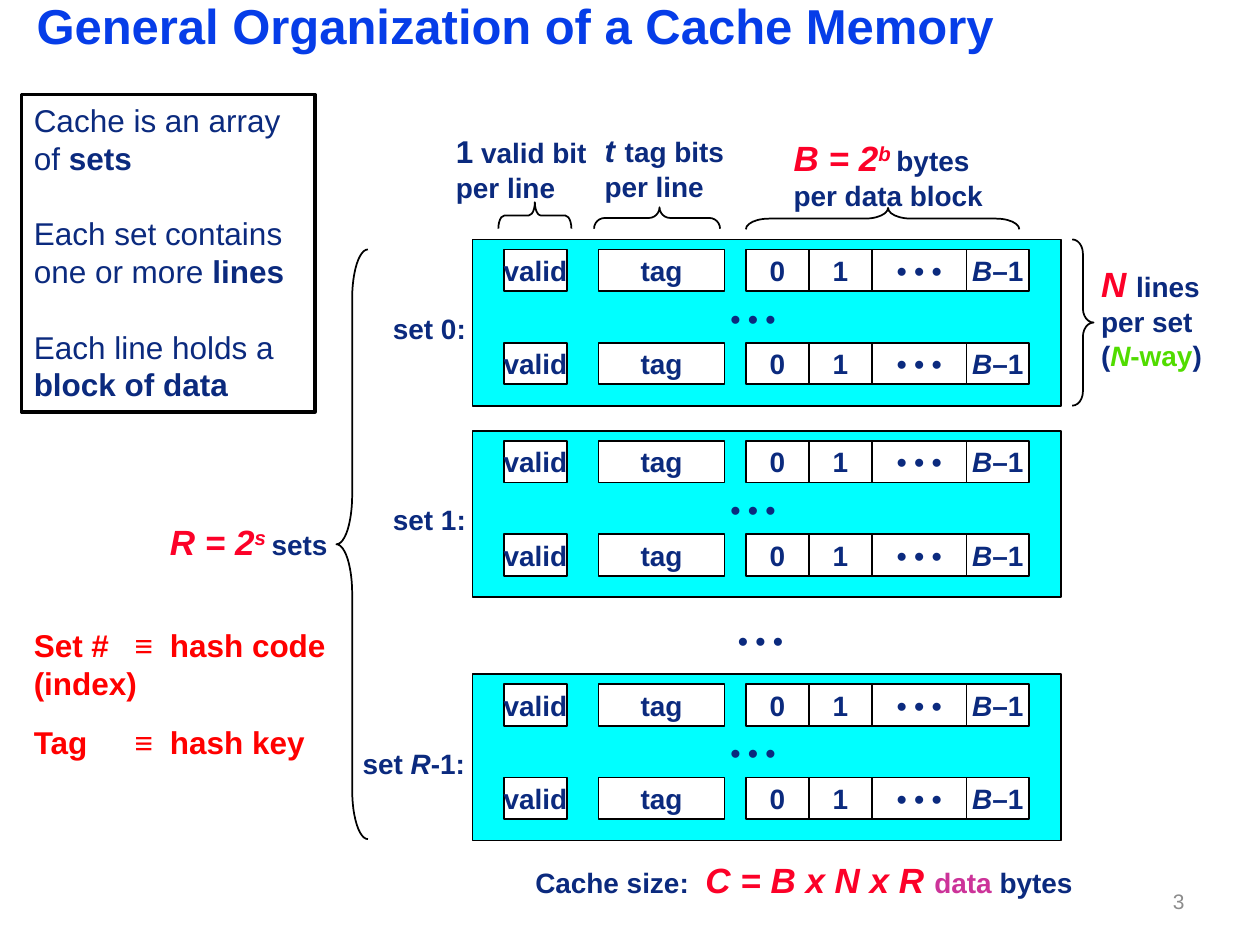
"""Build a slide that explains the general organization of a cache memory."""
from lxml import etree
from pptx import Presentation
from pptx import util as u
from pptx.dml.color import RGBColor
from pptx.enum import shapes, text
from pptx.oxml.ns import qn

THEME = {
    "font": "Arial",
    "set_fill": "00FFFF",
    "cell_fill": "FFFFFF",
    "line": "000000",
    "styles": {
        "title": (28, "063DE8", "b"),
        "label": (16, "0B2A7E", "b"),
        "variable": (16, "0B2A7E", "bi"),
        "count": (18, "0B2A7E", "b"),
        "tag count": (18, "0B2A7E", "bi"),
        "formula": (20, "FC0128", "bi"),
        "power": (20, "FC0128", "bi^"),
        "way": (16, "51DC00", "b"),
        "way variable": (16, "51DC00", "bi"),
        "data": (16, "CC3399", "b"),
        "note": (18, "0B2A7E", ""),
        "note bold": (18, "0B2A7E", "b"),
        "hash": (18, "FF0000", "b"),
        "number": (12, "8C8C8C", ""),
    },
}

TITLE = [[("General Organization of a Cache Memory", "title")]]
DOTS = [[("• • •", "label")]]
NOTES = [
    [("Cache is an array", "note")],
    [("of ", "note"), ("sets", "note bold")],
    [("Each set contains", "note")],
    [("one or more ", "note"), ("lines", "note bold")],
    [("Each line holds a", "note")],
    [("block of data", "note bold")],
]
HASHES = [
    [("Set #\t≡\thash code", "hash")],
    [("(index)", "hash")],
    [("Tag\t≡\thash key", "hash")],
]
CACHE_SIZE = [[("Cache size:\t", "label"), ("C = B x N x R ", "formula"),
               ("data", "data"), (" bytes", "label")]]
LINES_PER_SET = [
    [("N ", "formula"), ("lines", "label")],
    [("per set", "label")],
    [("(", "label"), ("N", "way variable"), ("-way", "way"), (")", "label")],
]
CAPTIONS = [
    ((3.52, 1, 1.26, 0.67), [[("1", "count"), (" valid bit", "label")],
                             [("per line", "label")]]),
    ((4.7, 0.96, 1.17, 0.71), [[("t", "tag count"), (" ", "formula"), ("tag bits", "label")],
                               [("per line", "label")]]),
    ((6.2, 1.03, 1.72, 0.71), [[("B = 2", "formula"), ("b ", "power"), ("bytes", "label")],
                               [("per data block", "label")]]),
    ((1.25, 4.08, 1.51, 0.44), [[("R = 2", "formula"), ("s ", "power"), ("sets", "label")]]),
]
SETS = [
    (1.9, 0.79, [[("set 0:", "label")]]),
    (3.42, 0.79, [[("set 1:", "label")]]),
    (5.35, 1.03, [[("set ", "label"), ("R", "variable"), ("-1:", "label")]]),
]
FIELDS = [
    (0.25, 0.5, [[("valid", "label")]]),
    (0.25, 1, [[("tag", "label")]]),
    (0.17, 0.5, [[("0", "label")]]),
    (0, 0.5, [[("1", "label")]]),
    (0, 0.75, DOTS),
    (0, 0.5, [[("B", "variable"), ("–1", "label")]]),
]
BRACES = [
    ("RIGHT_BRACE", (4.14, 1.42, 0.21, 0.58), 270, (0.23, 0.5)),
    ("RIGHT_BRACE", (5.13, 1.23, 0.17, 1), 270, (0.5, 0.52)),
    ("RIGHT_BRACE", (6.92, 0.65, 0.17, 2.17), 270, (1.08, 0.52)),
    ("RIGHT_BRACE", (8.51, 1.9, 0.17, 1.32), 0, (0.66, 0.5)),
    ("LEFT_BRACE", (2.67, 1.98, 0.25, 4.68), 0, (1.56, 0.5)),
]
SET_LEFT, SET_WIDTH, SET_HEIGHT = 3.75, 4.67, 1.32
ROW_OFFSETS, CELL_HEIGHT = (0.08, 0.82), 0.33


def write(shape, paragraphs, align="LEFT", anchor="MIDDLE", wrap=False):
    """Fill a shape with paragraphs made of styled runs."""
    frame = shape.text_frame
    frame.word_wrap = wrap
    frame.vertical_anchor = text.MSO_ANCHOR[anchor]
    for index, runs in enumerate(paragraphs):
        paragraph = frame.add_paragraph() if index else frame.paragraphs[0]
        paragraph.alignment = text.PP_ALIGN[align]
        for words, style in runs:
            size, color, marks = THEME["styles"][style]
            run = paragraph.add_run()
            run.text = words
            run.font.name = THEME["font"]
            run.font.size = u.Pt(size)
            run.font.color.rgb = RGBColor.from_string(color)
            run.font.bold = "b" in marks
            run.font.italic = "i" in marks
            if "^" in marks:
                run._r.get_or_add_rPr().set("baseline", "30000")
    return frame


def add_text(slide, box, paragraphs, **options):
    """Add a text box."""
    shape = slide.shapes.add_textbox(*map(u.Inches, box))
    return write(shape, paragraphs, **options)


def add_outline(slide, kind, box, fill=None, weight=1):
    """Add a preset shape with a thin line and no shadow."""
    shape = slide.shapes.add_shape(shapes.MSO_SHAPE[kind], *map(u.Inches, box))
    shape.shadow.inherit = False
    shape.line.color.rgb = RGBColor.from_string(THEME["line"])
    shape.line.width = u.Pt(weight)
    if fill:
        shape.fill.solid()
        shape.fill.fore_color.rgb = RGBColor.from_string(fill)
    else:
        shape.fill.background()
    return shape


def set_tabs(paragraph, *stops):
    """Give a paragraph left tab stops, in inches."""
    tabs = etree.SubElement(paragraph._p.get_or_add_pPr(), qn("a:tabLst"))
    for stop in stops:
        etree.SubElement(tabs, qn("a:tab"), pos=str(u.Inches(stop)), algn="l")


def add_title(slide):
    """Place and format the title placeholder."""
    title = slide.shapes.title
    title.left, title.top, title.width, title.height = map(u.Inches, (0.22, 0, 9.78, 0.47))
    frame = write(title, TITLE, anchor="TOP", wrap=True)
    frame.auto_size = text.MSO_AUTO_SIZE.NONE
    frame.margin_left = frame.margin_right = u.Inches(0.07)
    frame.margin_top = frame.margin_bottom = u.Inches(0.03)
    frame.paragraphs[0].line_spacing = 0.87


def add_set(slide, top, label_width, label):
    """Draw one cache set with its label and two lines of fields."""
    add_outline(slide, "RECTANGLE", (SET_LEFT, top, SET_WIDTH, SET_HEIGHT), THEME["set_fill"])
    for offset in ROW_OFFSETS:
        left = SET_LEFT
        for gap, width, words in FIELDS:
            left += gap
            cell = add_outline(slide, "RECTANGLE", (left, top + offset, width, CELL_HEIGHT),
                               THEME["cell_fill"])
            write(cell, words, align="CENTER")
            left += width
    add_text(slide, (SET_LEFT + 0.06 - label_width, top + 0.52, label_width, 0.37), label)
    add_text(slide, (5.7, top + 0.46, 0.75, CELL_HEIGHT), DOTS)


def main():
    """Assemble and save the slide."""
    presentation = Presentation()
    presentation.slide_width, presentation.slide_height = u.Inches(10), u.Inches(7.5)
    slide = presentation.slides.add_slide(presentation.slide_layouts[5])
    add_title(slide)
    for cache_set in SETS:
        add_set(slide, *cache_set)
    add_text(slide, (5.76, 4.92, 0.75, CELL_HEIGHT), DOTS)
    for kind, box, rotation, adjustments in BRACES:
        brace = add_outline(slide, kind, box)
        brace.rotation = rotation
        for index, value in enumerate(adjustments):
            brace.adjustments[index] = value
    for box, words in CAPTIONS:
        add_text(slide, box, words)
    add_text(slide, (8.64, 2.03, 1.36, 0.98), LINES_PER_SET, wrap=True)
    size = add_text(slide, (4.15, 6.76, 4.6, 0.44), CACHE_SIZE, wrap=True)
    set_tabs(size.paragraphs[0], 1.35)

    notes = add_outline(slide, "RECTANGLE", (0.17, 0.75, 2.33, 2.52), weight=2)
    frame = write(notes, NOTES, anchor="TOP", wrap=True)
    for index, paragraph in enumerate(frame.paragraphs):
        paragraph.line_spacing = u.Pt(21.6)
        paragraph.space_before = u.Pt(21.6 if index in (2, 4) else 0)

    hashes = add_text(slide, (0.17, 4.92, 2.7, 1.18), HASHES, anchor="TOP", wrap=True)
    hashes.paragraphs[2].space_before = u.Pt(12)
    for paragraph in hashes.paragraphs:
        set_tabs(paragraph, 0.8, 1.08)
    add_text(slide, (7.17, 6.95, 2.33, 0.4), [[("3", "number")]], align="RIGHT", wrap=True)
    presentation.save("out.pptx")


if __name__ == "__main__":
    main()
